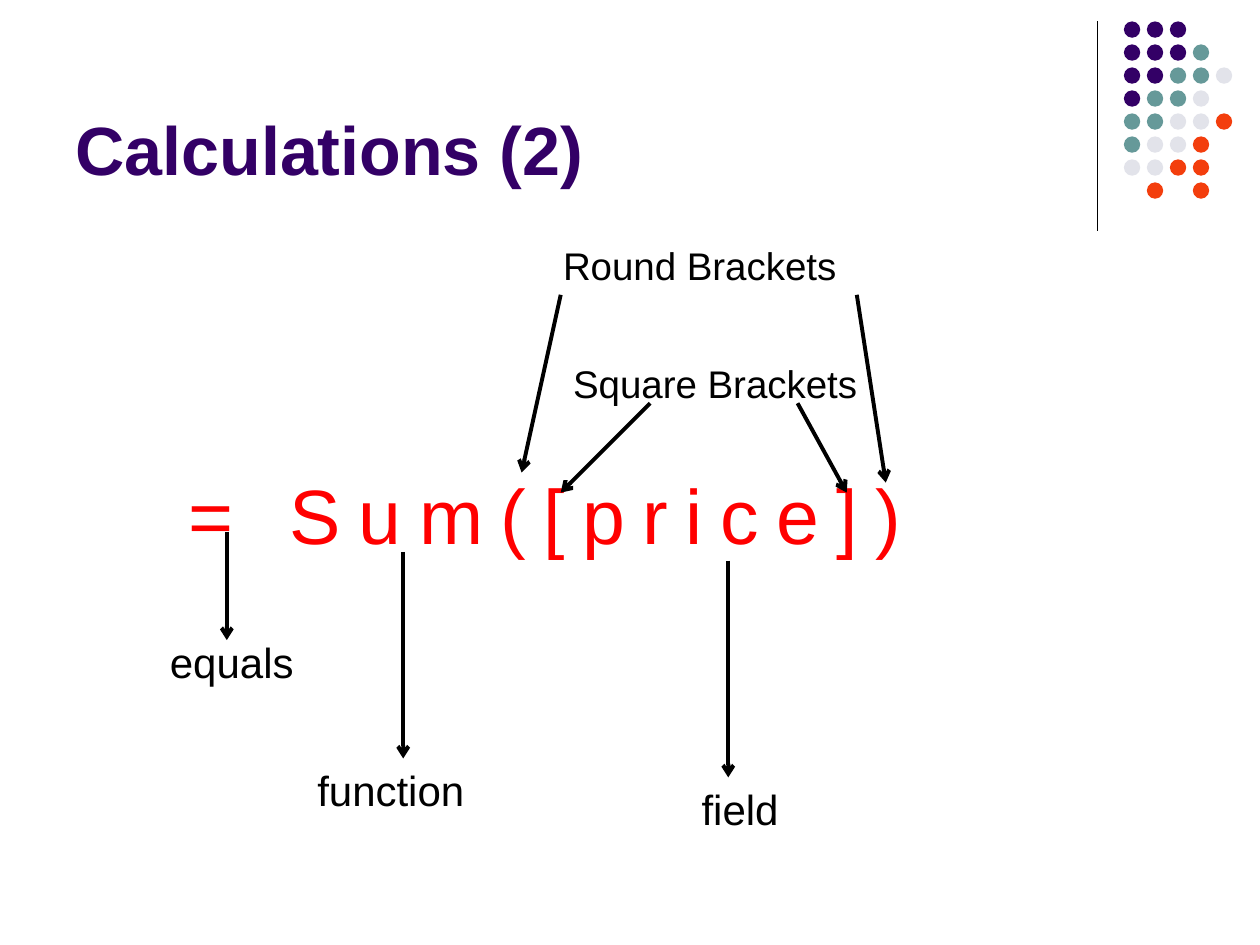
from lxml import etree
from pptx import Presentation
from pptx.dml.color import RGBColor
from pptx.enum.shapes import MSO_CONNECTOR as CONN, MSO_SHAPE as SHAPE
from pptx.enum.text import MSO_ANCHOR as ANCHOR
from pptx.oxml.ns import qn
from pptx.util import Inches, Pt

PURPLE = RGBColor(0x33, 0x00, 0x66)
TEAL = RGBColor(0x66, 0x99, 0x99)
GREY = RGBColor(0xE2, 0xE3, 0xEA)
ORANGE = RGBColor(0xF3, 0x3E, 0x0D)
RED = RGBColor(0xFF, 0x00, 0x00)
BLACK = RGBColor(0x00, 0x00, 0x00)

prs = Presentation()
prs.slide_width, prs.slide_height = Inches(10), Inches(7.5)
s = prs.slides.add_slide(prs.slide_layouts[6])


def add_text(text, left, top, width, height, size, color=BLACK, wrap=True):
    box = s.shapes.add_textbox(Inches(left), Inches(top), Inches(width), Inches(height))
    box.text_frame.word_wrap = wrap
    p = box.text_frame.paragraphs[0]
    p.text = text
    p.font.name, p.font.size, p.font.color.rgb = "Arial", Pt(size), color
    return box


def add_line(x1, y1, x2, y2, width, arrow=True):
    line = s.shapes.add_connector(CONN.STRAIGHT, Inches(x1), Inches(y1), Inches(x2), Inches(y2))
    line.line.color.rgb, line.line.width = BLACK, Pt(width)
    if arrow:
        etree.SubElement(line.line._get_or_add_ln(), qn("a:tailEnd"), type="arrow")
    etree.SubElement(line._element.spPr, qn("a:effectLst"))
    return line


# Corner decoration: a rule and a grid of dots
add_line(8.71, 0.17, 8.71, 1.83, 0.75, arrow=False)
DOT_COLORS = {"P": PURPLE, "T": TEAL, "G": GREY, "O": ORANGE}
DOT_ROWS = ["PPP", "PPPT", "PPTTG", "PTTG", "TTGGO", "TGGO", "GGOO", " O O"]
pitch = Inches(0.73) / 4
for row, codes in enumerate(DOT_ROWS):
    for col, code in enumerate(codes):
        if code == " ":
            continue
        dot = s.shapes.add_shape(SHAPE.OVAL, int(Inches(8.92) + col * pitch),
                                 int(Inches(0.17) + row * pitch), Inches(0.13), Inches(0.13))
        dot.shadow.inherit = False
        dot.fill.solid()
        dot.fill.fore_color.rgb = DOT_COLORS[code]
        dot.line.fill.background()

# Title
title = add_text("Calculations (2)", 0.5, 0.13, 8.25, 1.42, 39, PURPLE)
title.text_frame.vertical_anchor = ANCHOR.BOTTOM
title.text_frame.paragraphs[0].font.bold = True

# Formula, with letters spaced 10 points apart
formula = add_text("= Sum([price])", 1.4, 3.66, 7, 0.8, 44, RED)
formula.text_frame.paragraphs[0].runs[0].font._element.set("spc", "1000")

# Labels
add_text("equals", 1.25, 5, 1.2, 0.5, 24, wrap=False)
function_label = add_text("function", 2.42, 6.02, 1.56, 0.5, 24)
add_text("field", 5.47, 6.17, 0.94, 0.5, 24)
add_text("Round Brackets", 4.37, 1.87, 3.05, 0.47, 22)
add_text("Square Brackets", 4.45, 2.81, 2.48, 0.47, 22, wrap=False)

# Arrows between the labels and the formula
for ends in [
    (1.8, 4.22, 1.8, 5.08),
    (5.78, 4.45, 5.78, 6.17),
    (4.45, 2.34, 4.14, 3.75),
    (6.8, 2.34, 7.03, 3.83),
    (5.16, 3.2, 4.45, 3.91),
    (6.33, 3.2, 6.72, 3.91),
]:
    add_line(*ends, 2.25)
add_line(3.2, 4.38, 3.2, 6.02, 2.25).end_connect(function_label, 0)

prs.save("out.pptx")
